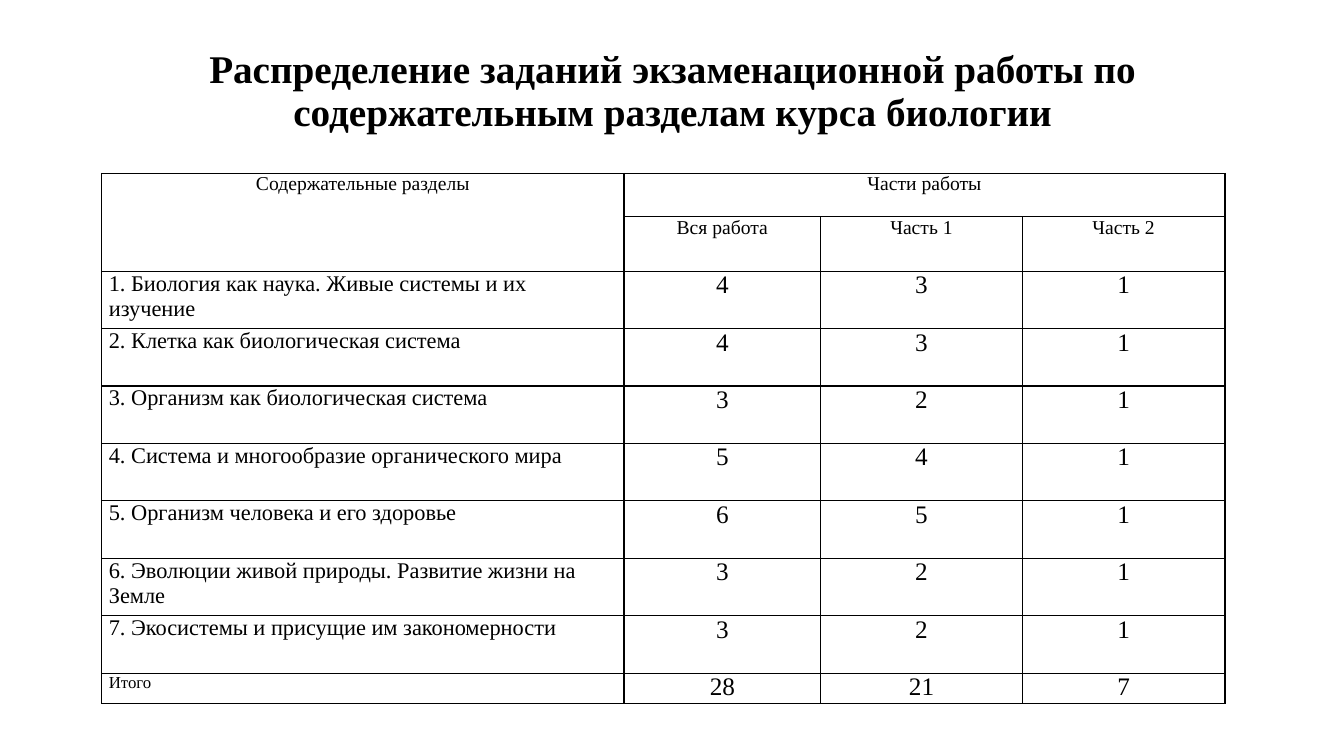
from dataclasses import dataclass

from lxml.etree import SubElement
from pptx import Presentation
from pptx.dml.color import RGBColor
from pptx.enum.text import MSO_ANCHOR, PP_ALIGN
from pptx.oxml.ns import qn
from pptx.table import Table, _Cell
from pptx.text.text import TextFrame
from pptx.util import Inches, Pt

BLACK = RGBColor(0, 0, 0)
FONT = "Times New Roman"


@dataclass
class Section:
    name: str
    part1: int
    part2: int
    name_size: int = 16

    @property
    def counts(self) -> tuple[int, int, int]:
        return self.part1 + self.part2, self.part1, self.part2


TITLE = "Распределение заданий экзаменационной работы по содержательным разделам курса биологии"
PART_NAMES = ["Вся работа", "Часть 1", "Часть 2"]
SECTIONS = [
    Section("1. Биология как наука. Живые системы и их изучение", 3, 1),
    Section("2. Клетка как биологическая система", 3, 1),
    Section("3. Организм как биологическая система", 2, 1),
    Section("4. Система и многообразие органического мира", 4, 1),
    Section("5. Организм человека и его здоровье", 5, 1),
    Section("6. Эволюции живой природы. Развитие жизни на Земле", 2, 1),
    Section("7. Экосистемы и присущие им закономерности", 2, 1),
]
TOTAL = Section(
    "Итого",
    sum(section.part1 for section in SECTIONS),
    sum(section.part2 for section in SECTIONS),
    name_size=12,
)
COLUMN_WIDTHS = [5.18, 1.95, 2, 2.01]
ROW_HEIGHTS = [0.43, 0.54] + [0.57] * len(SECTIONS) + [0.28]


def write(frame: TextFrame, text: str, *, size: int, bold: bool = False,
          align: PP_ALIGN = PP_ALIGN.CENTER, spacing: float = 1.0) -> None:
    paragraph = frame.paragraphs[0]
    paragraph.alignment = align
    paragraph.line_spacing = spacing
    run = paragraph.add_run()
    run.text = text
    run.font.name = FONT
    run.font.size = Pt(size)
    run.font.bold = bold
    run.font.color.rgb = BLACK


def style_cell(cell: _Cell) -> None:
    cell.margin_left = cell.margin_right = Inches(0.07)
    cell.margin_top = cell.margin_bottom = 0
    properties = cell._tc.get_or_add_tcPr()
    for side in ("a:lnL", "a:lnR", "a:lnT", "a:lnB"):
        border = SubElement(properties, qn(side), w=str(Pt(1)))
        fill = SubElement(border, qn("a:solidFill"))
        SubElement(fill, qn("a:srgbClr"), val=str(BLACK))
    cell.fill.background()


def fill_section(table: Table, row: int, section: Section) -> None:
    write(table.cell(row, 0).text_frame, section.name,
          size=section.name_size, align=PP_ALIGN.LEFT)
    for column, count in enumerate(section.counts, start=1):
        write(table.cell(row, column).text_frame, str(count), size=18)


def main() -> None:
    presentation = Presentation()
    presentation.slide_width = Inches(13.33)
    presentation.slide_height = Inches(7.5)
    slide = presentation.slides.add_slide(presentation.slide_layouts[6])

    # Title, raised above the table by a deep bottom margin
    title = slide.shapes.add_textbox(
        Inches(0.92), Inches(0.4), Inches(11.5), Inches(1.45)).text_frame
    title.word_wrap = True
    title.vertical_anchor = MSO_ANCHOR.MIDDLE
    title.margin_bottom = Inches(0.47)
    write(title, TITLE, size=28, bold=True, spacing=0.9)

    # Table grid
    table = slide.shapes.add_table(
        len(ROW_HEIGHTS), len(COLUMN_WIDTHS), Inches(1.01), Inches(1.72),
        Inches(sum(COLUMN_WIDTHS)), Inches(sum(ROW_HEIGHTS))).table
    table.first_row = table.horz_banding = False
    for column, width in zip(table.columns, COLUMN_WIDTHS):
        column.width = Inches(width)
    for row, height in zip(table.rows, ROW_HEIGHTS):
        row.height = Inches(height)
    for cell in table.iter_cells():
        style_cell(cell)

    # Two-level header
    table.cell(0, 0).merge(table.cell(1, 0))
    table.cell(0, 1).merge(table.cell(0, 3))
    write(table.cell(0, 0).text_frame, "Содержательные разделы", size=14)
    write(table.cell(0, 1).text_frame, "Части работы", size=14)
    for column, part_name in enumerate(PART_NAMES, start=1):
        write(table.cell(1, column).text_frame, part_name, size=14)

    # Sections and total
    for row, section in enumerate([*SECTIONS, TOTAL], start=2):
        fill_section(table, row, section)

    presentation.save("out.pptx")


if __name__ == "__main__":
    main()
